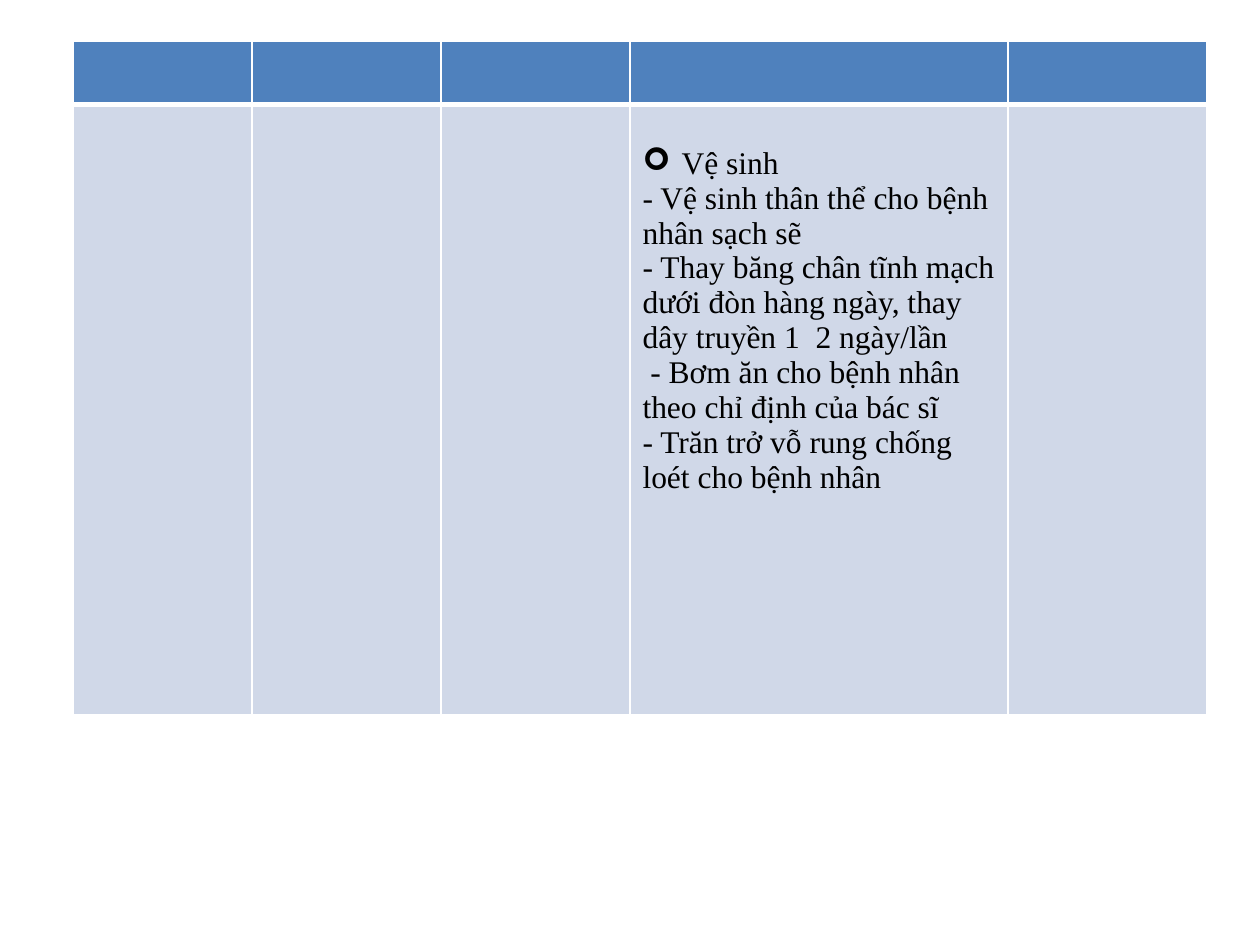
from dataclasses import dataclass

from lxml import etree
from pptx import Presentation
from pptx.dml.color import RGBColor
from pptx.oxml.ns import qn
from pptx.util import Inches, Pt


@dataclass(frozen=True)
class Theme:
    header: str = "4F81BD"
    body: str = "D0D8E8"
    border: str = "FFFFFF"
    text: str = "000000"
    font: str = "Times New Roman"
    size: int = 18
    thin: int = 1
    thick: int = 3


THEME = Theme()
COL_WIDTHS = [1.42, 1.5, 1.5, 3, 1.58]
ROW_HEIGHTS = [0.5, 4.84]
CARE_COLUMN = 3
CARE_HEADING = "Vệ sinh"
CARE_STEPS = [
    "- Vệ sinh thân thể cho bệnh nhân sạch sẽ",
    "- Thay băng chân tĩnh mạch dưới đòn hàng ngày, thay dây truyền 1  2 ngày/lần"
    "\v - Bơm ăn cho bệnh nhân theo chỉ định của bác sĩ"
    "\v- Trăn trở vỗ rung chống loét cho bệnh nhân",
]


def set_border(cell, side, width):
    ln = etree.SubElement(cell._tc.get_or_add_tcPr(), qn(f"a:ln{side}"), w=str(Pt(width)))
    fill = etree.SubElement(ln, qn("a:solidFill"))
    etree.SubElement(fill, qn("a:srgbClr"), val=THEME.border)


def style_cell(cell, is_header):
    # Borders come before the fill in the cell properties
    for side in "LRTB":
        at_divider = side == ("B" if is_header else "T")
        set_border(cell, side, THEME.thick if at_divider else THEME.thin)
    cell.fill.solid()
    cell.fill.fore_color.rgb = RGBColor.from_string(THEME.header if is_header else THEME.body)


def add_bullet(p, char, indent):
    pPr = p._p.get_or_add_pPr()
    pPr.set("marL", str(indent))
    pPr.set("indent", str(-indent))
    etree.SubElement(pPr, qn("a:buFont"), typeface="Wingdings")
    etree.SubElement(pPr, qn("a:buChar"), char=char)


def fill_care_cell(cell):
    cell.margin_top = Inches(0.33)
    tf = cell.text_frame
    tf.text = "\n".join([CARE_HEADING, *CARE_STEPS])
    add_bullet(tf.paragraphs[0], "➢", Inches(0.31))
    for p in tf.paragraphs:
        for r in p.runs:
            r.font.name = THEME.font
            r.font.size = Pt(THEME.size)
            r.font.color.rgb = RGBColor.from_string(THEME.text)


def add_care_table(s):
    table = s.shapes.add_table(
        len(ROW_HEIGHTS), len(COL_WIDTHS), Inches(0.58), Inches(0.33),
        Inches(sum(COL_WIDTHS)), Inches(sum(ROW_HEIGHTS)),
    ).table
    table.horz_banding = False
    for column, width in zip(table.columns, COL_WIDTHS):
        column.width = Inches(width)
    for i, (row, height) in enumerate(zip(table.rows, ROW_HEIGHTS)):
        row.height = Inches(height)
        for cell in row.cells:
            style_cell(cell, is_header=i == 0)
    return table


def main():
    prs = Presentation()
    prs.slide_width, prs.slide_height = Inches(10), Inches(7.5)
    s = prs.slides.add_slide(prs.slide_layouts[6])

    # Care plan table with its nursing steps
    table = add_care_table(s)
    fill_care_cell(table.cell(1, CARE_COLUMN))

    prs.save("out.pptx")


if __name__ == "__main__":
    main()
